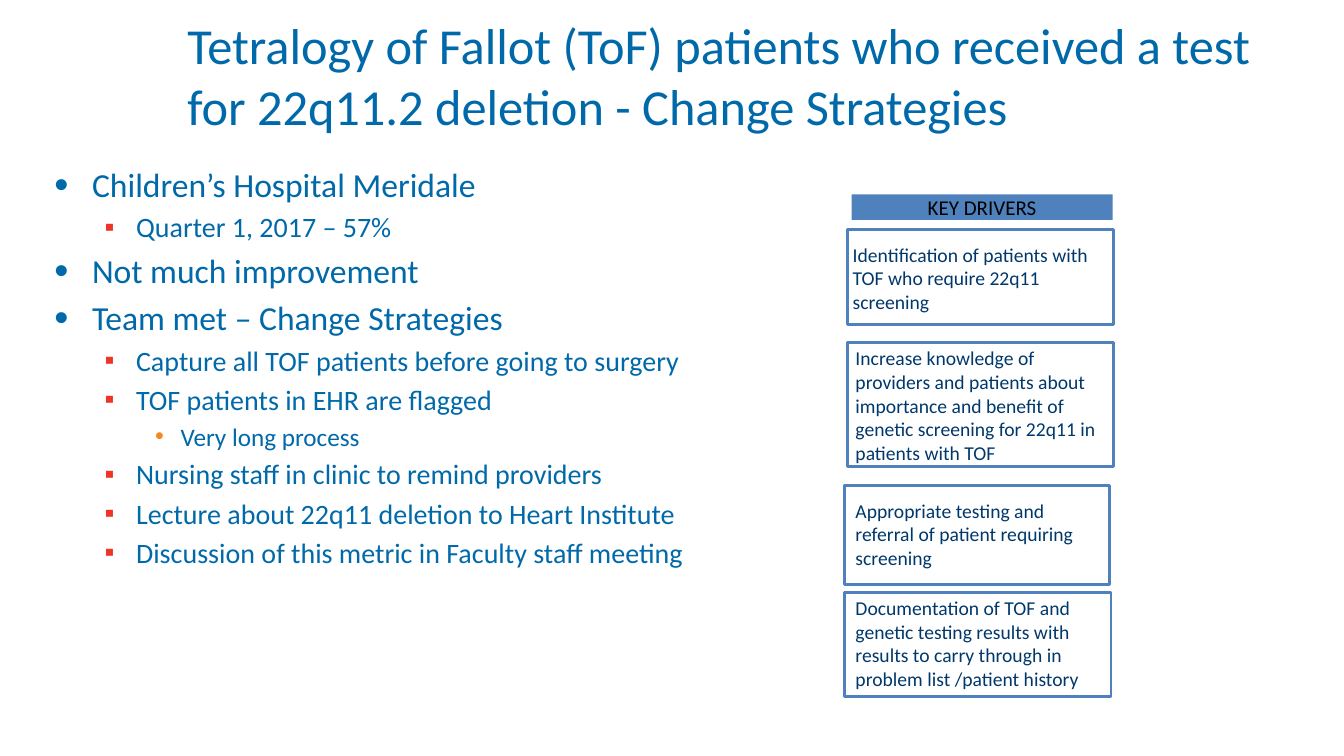
"""Build the slide on change strategies for 22q11.2 deletion testing."""
from lxml.etree import SubElement
from pptx import Presentation
from pptx.dml.color import RGBColor
from pptx.enum.shapes import MSO_SHAPE
from pptx.enum.text import MSO_ANCHOR, PP_ALIGN
from pptx.oxml.ns import qn
from pptx.util import Cm, Pt

COLORS = {
    "blue": "0069AA", "navy": "00386B", "frame": "4F81BD",
    "red": "EE3424", "orange": "F7881E", "black": "000000",
}

LEVELS = [
    {"size": 24, "margin": 0.95, "hang": 0.95, "mark": "•", "color": "blue", "scale": 120},
    {"size": 20, "margin": 2.06, "hang": 0.79, "mark": "▪", "color": "red", "scale": 100},
    {"size": 18, "margin": 3.18, "hang": 0.64, "mark": "•", "color": "orange", "scale": 100},
]

STRATEGIES = [
    (0, "Children’s Hospital Meridale"),
    (1, "Quarter 1, 2017 – 57%"),
    (0, "Not much improvement"),
    (0, "Team met – Change Strategies"),
    (1, "Capture all TOF patients before going to surgery"),
    (1, "TOF patients in EHR are flagged"),
    (2, "Very long process"),
    (1, "Nursing staff in clinic to remind providers"),
    (1, "Lecture about 22q11 deletion to Heart Institute"),
    (1, "Discussion of this metric in Faculty staff meeting"),
]

DRIVERS = [
    ((21.36, 5.79, 6.71, 2.39), (21.49, 6.1, 6.43, 1.8),
     "Identification of patients with TOF who require 22q11 screening"),
    ((21.36, 8.64, 6.71, 3.12), (21.56, 8.71, 6.48, 3),
     "Increase knowledge of providers and patients about importance and "
     "benefit of genetic screening for 22q11 in patients with TOF"),
    ((21.29, 12.24, 6.68, 2.49), (21.56, 12.55, 6.17, 1.8),
     "Appropriate testing and referral of patient requiring screening"),
    ((21.29, 14.94, 6.71, 2.62), (21.56, 15.01, 6.76, 2.39),
     "Documentation of TOF and genetic testing results with results to "
     "carry through in problem list /patient history"),
]


class DriverSlide:
    """Hold the style and the current slide."""

    font = "Calibri"

    def __init__(self, deck):
        self.slide = deck.slides.add_slide(deck.slide_layouts[6])

    def color(self, name):
        return RGBColor.from_string(COLORS[name])

    def style(self, paragraph, size, color):
        for run in paragraph.runs:
            run.font.name = self.font
            run.font.size = Pt(size)
            run.font.color.rgb = self.color(color)

    def frame(self, shape, anchor, inset=None):
        frame = shape.text_frame
        frame.word_wrap = True
        frame.vertical_anchor = anchor
        if inset is not None:
            frame.margin_left = frame.margin_right = Cm(inset)
            frame.margin_top = frame.margin_bottom = Cm(inset)
        return frame

    def text(self, shapes, place, words, size, color, inset=None):
        box = shapes.add_textbox(*map(Cm, place))
        frame = self.frame(box, MSO_ANCHOR.MIDDLE, inset)
        frame.text = words
        self.style(frame.paragraphs[0], size, color)

    def bullet(self, paragraph, level):
        props = paragraph._p.get_or_add_pPr()
        props.set("marL", str(Cm(level["margin"])))
        props.set("indent", str(-Cm(level["hang"])))
        tint = SubElement(props, qn("a:buClr"))
        SubElement(tint, qn("a:srgbClr"), val=COLORS[level["color"]])
        SubElement(props, qn("a:buSzPct"), val=str(level["scale"] * 1000))
        SubElement(props, qn("a:buFont"), typeface="Arial")
        SubElement(props, qn("a:buChar"), char=level["mark"])

    def outline(self, place, items):
        box = self.slide.shapes.add_textbox(*map(Cm, place))
        frame = self.frame(box, MSO_ANCHOR.TOP)
        for index, (depth, words) in enumerate(items):
            level = LEVELS[depth]
            paragraph = frame.add_paragraph() if index else frame.paragraphs[0]
            paragraph.text = words
            paragraph.level = depth
            self.bullet(paragraph, level)
            if index:
                paragraph.space_before = Pt(level["size"] * 0.2)
            self.style(paragraph, level["size"], "blue")

    def rectangle(self, shapes, place):
        rectangle = shapes.add_shape(MSO_SHAPE.RECTANGLE, *map(Cm, place))
        rectangle.shadow.inherit = False
        return rectangle

    def banner(self, place, words):
        banner = self.rectangle(self.slide.shapes, place)
        banner.fill.solid()
        banner.fill.fore_color.rgb = self.color("frame")
        banner.line.fill.background()
        frame = self.frame(banner, MSO_ANCHOR.TOP, 0)
        frame.text = words
        heading = frame.paragraphs[0]
        heading.alignment = PP_ALIGN.CENTER
        self.style(heading, 15, "black")

    def driver(self, border_place, text_place, words):
        shapes = self.slide.shapes.add_group_shape().shapes
        border = self.rectangle(shapes, border_place)
        border.fill.background()
        border.line.color.rgb = self.color("frame")
        border.line.width = Pt(2)
        self.text(shapes, text_place, words, 14, "navy", 0)


def main():
    deck = Presentation()
    deck.slide_width, deck.slide_height = Cm(33.87), Cm(19.05)
    page = DriverSlide(deck)
    page.text(page.slide.shapes, (4.47, 0.08, 28.55, 3.61),
              "Tetralogy of Fallot (ToF) patients who received a test "
              "for 22q11.2 deletion - Change Strategies", 36, "blue")
    page.outline((1.12, 4.01, 31.9, 13.97), STRATEGIES)
    page.banner((21.46, 4.9, 6.58, 0.64), "KEY DRIVERS")
    for border_place, text_place, words in DRIVERS:
        page.driver(border_place, text_place, words)
    deck.save("out.pptx")


if __name__ == "__main__":
    main()
